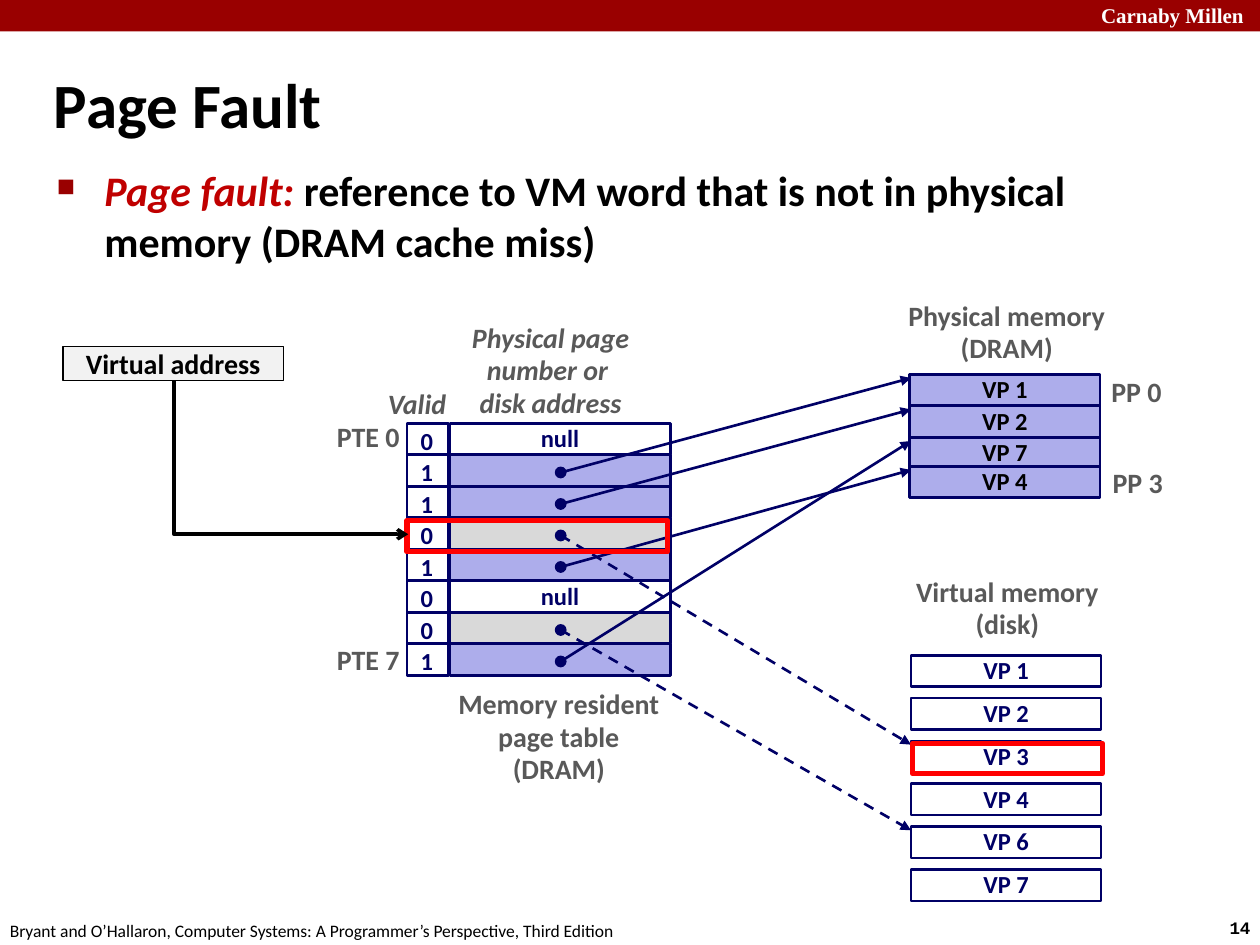
"""Build the page fault slide: page table, physical memory and virtual memory."""
from dataclasses import dataclass

from lxml import etree
from pptx import Presentation
from pptx.dml.color import RGBColor
from pptx.enum.dml import MSO_LINE
from pptx.enum.shapes import MSO_CONNECTOR, MSO_SHAPE
from pptx.enum.text import MSO_ANCHOR, PP_ALIGN
from pptx.oxml.ns import qn
from pptx.util import Inches, Pt

RECTANGLE, OVAL = MSO_SHAPE.RECTANGLE, MSO_SHAPE.OVAL
STRAIGHT, ELBOW = MSO_CONNECTOR.STRAIGHT, MSO_CONNECTOR.ELBOW
LEFT, CENTER, RIGHT = PP_ALIGN.LEFT, PP_ALIGN.CENTER, PP_ALIGN.RIGHT
TOP, MIDDLE = MSO_ANCHOR.TOP, MSO_ANCHOR.MIDDLE
DASH = MSO_LINE.DASH


@dataclass(frozen=True)
class Theme:
    """Fonts, colours and sizes of the slide."""
    font: str = "Calibri"
    serif: str = "Times New Roman"
    mono: str = "Courier New"
    banner: str = "990000"
    term: str = "C00000"
    navy: str = "000066"
    cached: str = "ADADEB"
    on_disk: str = "D9D9D9"
    button: str = "F2F2F2"
    gray: str = "595959"
    red: str = "FF0000"
    black: str = "000000"
    white: str = "FFFFFF"
    title: int = 36
    body: int = 24
    label: int = 16
    cell: int = 14
    owner: int = 12
    footer: int = 10
    tight: float = 0.98


THEME = Theme()
OWNER = "Carnaby Millen"
FOOTER = "Bryant and O’Hallaron, Computer Systems: A Programmer’s Perspective, Third Edition"
PAGE_NUMBER = "14"
TITLE = "Page Fault"
TERM, DEFINITION = "Page fault: ", "reference to VM word that is not in physical memory (DRAM cache miss)"

PAGE_TABLE = [
    ("0", None), ("1", ("memory", "VP 1")), ("1", ("memory", "VP 2")), ("0", ("disk", "VP 3")),
    ("1", ("memory", "VP 4")), ("0", None), ("0", ("disk", "VP 6")), ("1", ("memory", "VP 7")),
]
FAULT_ROW, FAULT_PAGE = 3, "VP 3"
MEMORY_TOPS = {"VP 1": 2.97, "VP 2": 3.22, "VP 7": 3.47, "VP 4": 3.7}
DISK_PAGES = ["VP 1", "VP 2", "VP 3", "VP 4", "VP 6", "VP 7"]
LABELS = [
    (["Memory resident", "page table", "(DRAM)"], (3.51, 5.41, 1.85, 0.89), CENTER, TOP, False),
    (["Physical memory", "(DRAM)"], (7.1, 2.33, 1.78, 0.63), CENTER, TOP, False),
    (["Virtual memory", "(disk)"], (7.15, 4.52, 1.69, 0.63), CENTER, TOP, False),
    (["Valid"], (2.98, 3.03, 0.75, 0.37), LEFT, TOP, True),
    (["Physical page", "number or ", "disk address"], (3.64, 2.5, 1.46, 0.89), CENTER, MIDDLE, True),
    (["PTE 0"], (2.57, 3.29, 0.7, 0.37), RIGHT, MIDDLE, False),
    (["PTE 7"], (2.57, 5.06, 0.7, 0.37), RIGHT, MIDDLE, False),
    (["PP 0"], (8.72, 2.93, 0.6, 0.37), CENTER, MIDDLE, False),
    (["PP 3"], (8.73, 3.65, 0.6, 0.37), CENTER, MIDDLE, False),
]

ROW = 0.25
TABLE_TOP, VALID_LEFT, VALID_WIDTH = 3.36, 3.23, 0.33
ENTRY_LEFT, ENTRY_WIDTH = 3.57, 1.75
MEMORY_LEFT, DISK_LEFT, PAGE_WIDTH = 7.22, 7.23, 1.51
DISK_TOP, DISK_STEP = 5.2, 0.34
DOT, DOT_X, DOT_DROP, TARGET_DROP = 0.08, 4.45, 0.14, 0.03
TABLE_TOPS = [TABLE_TOP + index * ROW for index in range(len(PAGE_TABLE))]
DISK_TOPS = {name: DISK_TOP + index * DISK_STEP for index, name in enumerate(DISK_PAGES)}

deck = Presentation()
deck.slide_width, deck.slide_height = Inches(10), Inches(7.5)
page = deck.slides.add_slide(deck.slide_layouts[6])


def inches(values):
    return [Inches(value) for value in values]


def add_span(para, text, size, color, bold=True, italic=False, font=THEME.font):
    span = para.add_run()
    span.text = text
    span.font.name, span.font.size = font, Pt(size)
    span.font.bold, span.font.italic = bold, italic
    span.font.color.rgb = RGBColor.from_string(color)


def write(box, lines, size, color, align=LEFT, anchor=TOP, wrap=False, spacing=None, **style):
    frame = box.text_frame
    frame.word_wrap, frame.vertical_anchor = wrap, anchor
    for index, line in enumerate(lines):
        para = frame.add_paragraph() if index else frame.paragraphs[0]
        para.alignment, para.line_spacing = align, spacing
        add_span(para, line, size, color, **style)
    return frame


def add_text(place, *content, **style):
    return write(page.shapes.add_textbox(*inches(place)), *content, **style)


def add_box(place, fill=None, line=THEME.navy, weight=1.5, kind=RECTANGLE):
    box = page.shapes.add_shape(kind, *inches(place))
    box.shadow.inherit = False
    if fill:
        box.fill.solid()
        box.fill.fore_color.rgb = RGBColor.from_string(fill)
    else:
        box.fill.background()
    if line:
        box.line.color.rgb = RGBColor.from_string(line)
        box.line.width = Pt(weight)
    else:
        box.line.fill.background()
    return box


def add_cell(place, text, fill, color=THEME.navy):
    box = add_box(place, fill)
    write(box, [text], THEME.cell, color, CENTER, MIDDLE, spacing=THEME.tight)


def add_arrow(start, end, kind=STRAIGHT, color=THEME.navy, weight=1.5, head="triangle", dash=None):
    arrow = page.shapes.add_connector(kind, *inches(start + end))
    arrow.line.color.rgb = RGBColor.from_string(color)
    arrow.line.width, arrow.line.dash_style = Pt(weight), dash
    properties = arrow._element.spPr
    etree.SubElement(properties.find(qn("a:ln")), qn("a:tailEnd"), type=head)
    etree.SubElement(properties, qn("a:effectLst"))
    return arrow


def indent(para, distance):
    properties = para._p.get_or_add_pPr()
    properties.set("marL", str(Inches(distance)))
    properties.set("indent", str(-Inches(distance)))
    return properties


def add_frame_text():
    add_box((0, 0, 10, 0.25), THEME.banner, None)
    add_text((8.64, -0.03, 1.43, 0.3), [OWNER], THEME.owner, THEME.white, wrap=True, font=THEME.serif)
    add_text((9.66, 7.23, 0.45, 0.27), [PAGE_NUMBER], THEME.footer, THEME.black, font=THEME.mono)
    add_text((-0.02, 7.25, 5.08, 0.27), [FOOTER], THEME.footer, THEME.black, bold=False)
    heading = add_text((0.33, 0.39, 9.06, 0.86), [TITLE], THEME.title, THEME.black, anchor=MIDDLE, wrap=True)
    indent(heading.paragraphs[0], 0.13)
    body = add_text((0.35, 1.26, 9.09, 0.83), [TERM], THEME.body, THEME.term, wrap=True, italic=True)
    para = body.paragraphs[0]
    add_span(para, DEFINITION, THEME.body, THEME.black)
    para.space_before = Pt(THEME.body * 0.2)
    properties = indent(para, 0.38)
    color = etree.SubElement(properties, qn("a:buClr"))
    etree.SubElement(color, qn("a:srgbClr"), val=THEME.banner)
    etree.SubElement(properties, qn("a:buSzPct"), val="60000")
    etree.SubElement(properties, qn("a:buChar"), char="■")


def add_page_table():
    fills = {"memory": THEME.cached, "disk": THEME.on_disk}
    for top, (valid, target) in zip(TABLE_TOPS, PAGE_TABLE):
        entry = (ENTRY_LEFT, top, ENTRY_WIDTH, ROW)
        if target:
            add_box(entry, fills[target[0]])
        else:
            add_cell(entry, "null", THEME.white)
        add_box((VALID_LEFT, top, VALID_WIDTH, ROW))
        add_text((VALID_LEFT + 0.01, top - 0.02, 0.31, 0.33), [valid], THEME.cell, THEME.navy, spacing=THEME.tight)


def add_pointers():
    ends = {"memory": (MEMORY_TOPS, None), "disk": (DISK_TOPS, DASH)}
    for top, (_, target) in zip(TABLE_TOPS, PAGE_TABLE):
        if target:
            tops, dash = ends[target[0]]
            middle = top + DOT_DROP
            add_arrow((DOT_X, middle), (DISK_LEFT, tops[target[1]] + TARGET_DROP), dash=dash)
            add_box((DOT_X - DOT / 2, middle - DOT / 2, DOT, DOT), THEME.navy, weight=1, kind=OVAL)


def add_fault():
    address = add_box((0.5, 2.75, 1.75, 0.27), THEME.button, THEME.black, 1)
    write(address, ["Virtual address"], THEME.label, THEME.black, CENTER, MIDDLE, wrap=True)
    row = add_box((VALID_LEFT, TABLE_TOPS[FAULT_ROW] + 0.02, 2.07, ROW), None, THEME.red, 3)
    add_box((DISK_LEFT + 0.01, DISK_TOPS[FAULT_PAGE] + 0.02, PAGE_WIDTH, 0.24), None, THEME.red, 3)
    x, y, across, down = 1.38, 3.02, 1.86, 1.22
    elbow = add_arrow((x, y), (x + across, y + down), ELBOW, THEME.black, 2, "arrow")
    elbow.begin_connect(address, 2)
    elbow.end_connect(row, 1)
    elbow.left, elbow.top, elbow.width, elbow.height = inches(
        (x + (across - down) / 2, y + (down - across) / 2, down, across))
    properties = elbow._element.spPr
    properties.find(qn("a:prstGeom")).set("prst", "bentConnector2")
    properties.find(qn("a:xfrm")).set("rot", "16200000")
    properties.find(qn("a:xfrm")).set("flipH", "1")


add_frame_text()
add_page_table()
for name, top in MEMORY_TOPS.items():
    add_cell((MEMORY_LEFT, top, PAGE_WIDTH, ROW), name, THEME.cached, THEME.black)
for name, top in DISK_TOPS.items():
    add_cell((DISK_LEFT, top, PAGE_WIDTH, ROW), name, THEME.white)
for lines, place, align, anchor, italic in LABELS:
    add_text(place, lines, THEME.label, THEME.gray, align, anchor, spacing=THEME.tight, italic=italic)
add_pointers()
add_fault()
deck.save("out.pptx")
